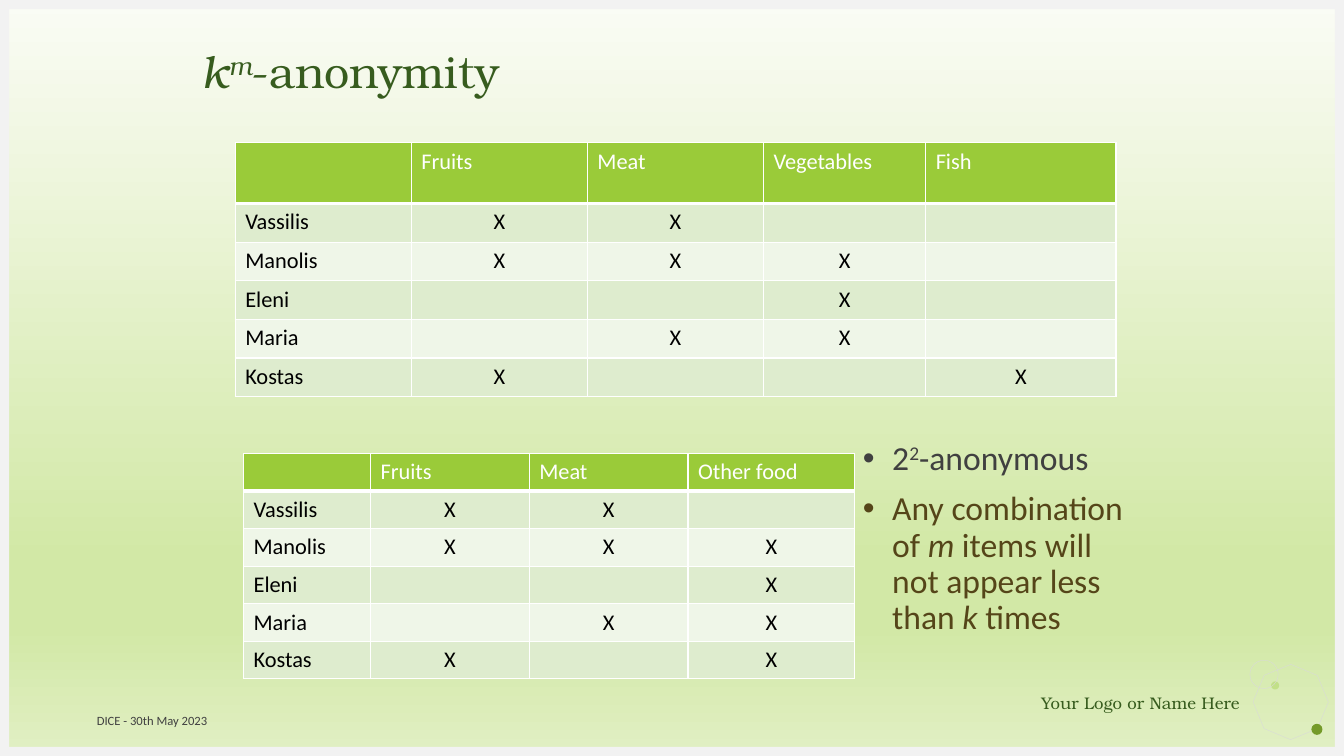
"""Build the k^m-anonymity slide with its two food tables."""
from copy import deepcopy

from lxml import etree
from pptx import Presentation
from pptx import util as u
from pptx.dml.color import RGBColor
from pptx.enum import shapes, text
from pptx.oxml.ns import qn

WIDTH, HEIGHT, FRAME = 960, 540, 6.5
SERIF, SANS = "TeX Gyre Bonum", "Calibri"
GREEN, GRAY, BROWN = "375C1E", "404040", "554519"
WHITE, BLACK, FRAME_GRAY, RING = "FFFFFF", "000000", "F2F2F2", "D9D9D9"
HEADER, BANDS = "9ACB39", ("DEECCE", "EFF6E8")
LEFT, CENTER, RIGHT = text.PP_ALIGN.LEFT, text.PP_ALIGN.CENTER, text.PP_ALIGN.RIGHT
OVAL, RECT, OCTAGON = (shapes.MSO_SHAPE.OVAL, shapes.MSO_SHAPE.RECTANGLE,
                       shapes.MSO_SHAPE.OCTAGON)


def rgb(value):
    return RGBColor.from_string(value)


class Deck:
    def __init__(self):
        self.prs = Presentation()
        self.prs.slide_width, self.prs.slide_height = u.Pt(WIDTH), u.Pt(HEIGHT)
        self.s = self.prs.slides.add_slide(self.prs.slide_layouts[1])

    def background(self, stops):
        fill = self.s.background.fill
        fill.gradient()
        fill.gradient_angle = 270
        gs_list = next(self.s.element.iter(qn("a:gsLst")))
        while len(gs_list) < len(stops):
            gs_list.append(deepcopy(gs_list[0]))
        for stop, (position, color) in zip(fill.gradient_stops, stops):
            stop.position = position
            stop.color.rgb = rgb(color)

    def shape(self, kind, box, fill=None, line=None, rotation=0):
        sp = self.s.shapes.add_shape(kind, *map(u.Pt, box))
        sp.shadow.inherit = False
        sp.rotation = rotation
        if fill:
            sp.fill.solid()
            sp.fill.fore_color.rgb = rgb(fill)
        else:
            sp.fill.background()
        if line:
            sp.line.color.rgb = rgb(line)
            sp.line.width = u.Pt(0.25)
        else:
            sp.line.fill.background()

    def runs(self, p, parts, size, color, font=SANS):
        for content, marks in parts:
            r = p.add_run()
            r.text = content
            r.font.name, r.font.size = font, u.Pt(size)
            r.font.color.rgb = rgb(color)
            r.font.italic = "i" in marks
            if "^" in marks:
                r.font._element.set("baseline", "30000")

    def frame(self, sp, box, anchor):
        sp.left, sp.top, sp.width, sp.height = map(u.Pt, box)
        tf = sp.text_frame
        tf.word_wrap, tf.auto_size = True, text.MSO_AUTO_SIZE.NONE
        tf.margin_left = tf.margin_right = tf.margin_top = tf.margin_bottom = 0
        tf.vertical_anchor = anchor
        return tf

    def title(self, box, parts):
        p = self.frame(self.s.shapes.title, box, text.MSO_ANCHOR.MIDDLE).paragraphs[0]
        p.alignment, p.line_spacing = LEFT, 0.9
        self.runs(p, parts, 32, GREEN, SERIF)

    def bullets(self, box, items):
        tf = self.frame(self.s.placeholders[1], box, text.MSO_ANCHOR.TOP)
        for i, (color, parts) in enumerate(items):
            p = tf.add_paragraph() if i else tf.paragraphs[0]
            p.line_spacing, p.space_before = 0.9, u.Pt(10)
            pPr = p._p.get_or_add_pPr()
            pPr.set("marL", str(u.Pt(21)))
            pPr.set("indent", str(-u.Pt(21)))
            etree.SubElement(pPr, qn("a:buFont"), typeface="Arial")
            etree.SubElement(pPr, qn("a:buChar"), char="•")
            self.runs(p, parts, 24, color)

    def label(self, box, content, size, color, font, align=LEFT,
              anchor=text.MSO_ANCHOR.TOP):
        p = self.frame(self.s.shapes.add_textbox(0, 0, 0, 0), box, anchor).paragraphs[0]
        p.alignment = align
        self.runs(p, [(content, "")], size, color, font)

    def cell(self, cell, content, fill, color, align, bottom):
        tcPr = cell._tc.get_or_add_tcPr()
        for side, width in (("L", 1), ("R", 1), ("T", 1), ("B", bottom)):
            ln = etree.SubElement(tcPr, qn("a:ln" + side), w=str(u.Pt(width)))
            solid = etree.SubElement(ln, qn("a:solidFill"))
            etree.SubElement(solid, qn("a:srgbClr"), val=WHITE)
        cell.fill.solid()
        cell.fill.fore_color.rgb = rgb(fill)
        p = cell.text_frame.paragraphs[0]
        p.alignment = align
        if content:
            self.runs(p, [(content, "")], 16, color)
        else:
            etree.SubElement(p._p, qn("a:endParaRPr"), sz="1600")

    def table(self, left, top, widths, heights, rows):
        box = (left, top, sum(widths), sum(heights))
        table = self.s.shapes.add_table(len(rows), len(widths), *map(u.Pt, box)).table
        for column, width in zip(table.columns, widths):
            column.width = u.Pt(width)
        for i, (row, height) in enumerate(zip(rows, heights)):
            table.rows[i].height = u.Pt(height)
            fill = BANDS[(i - 1) % 2] if i else HEADER
            for j, content in enumerate(row):
                self.cell(table.cell(i, j), content, fill, BLACK if i else WHITE,
                          CENTER if i and j else LEFT, 1 if i else 3)


def main():
    deck = Deck()
    deck.background([(0, "FAFCF5"), (0.74, "D2E8A6"), (0.83, "D2E8A6"), (1, "E1EFC4")])

    deck.shape(OCTAGON, (897.1, 476.6, 49.7, 49.7), line=RING, rotation=22.7)
    deck.shape(OVAL, (907.9, 486.7, 5.8, 5.8), fill="C2E088")
    deck.shape(OVAL, (936.7, 517, 7.9, 7.9), fill="749A29")
    deck.shape(OVAL, (892.8, 471.6, 20.2, 20.2), line=RING)
    deck.label((687.6, 494.6, 198, 14.4), "Your Logo or Name Here", 12, GREEN, SERIF, RIGHT)
    for edge in ((0, HEIGHT - FRAME, WIDTH, FRAME), (0, 0, WIDTH, FRAME),
                 (0, 0, FRAME, HEIGHT), (WIDTH - FRAME, 0, FRAME, HEIGHT)):
        deck.shape(RECT, edge, fill=FRAME_GRAY)

    deck.title((144, 23, 672, 60), [("k", "i"), ("m", "i^"), ("-anonymity", "")])
    deck.bullets((616.3, 315.4, 197.3, 164.9), [
        (GRAY, [("2", ""), ("2", "^"), ("-anonymous", "")]),
        (BROWN, [("Any combination of ", ""), ("m", "i"),
                 (" items will not appear less than ", ""), ("k", "i"), (" times", "")]),
    ])
    deck.label((69.1, 500.4, 445, 28.8), "DICE - 30th May 2023", 9, GRAY, SANS,
               anchor=text.MSO_ANCHOR.MIDDLE)

    deck.table(168, 102, [125.8] * 3 + [115.9, 136], [43.4] + [27.6] * 5, [
        ("", "Fruits", "Meat", "Vegetables", "Fish"),
        ("Vassilis", "Χ", "Χ", "", ""),
        ("Manolis", "Χ", "Χ", "Χ", ""),
        ("Eleni", "", "", "Χ", ""),
        ("Maria", "", "Χ", "Χ", ""),
        ("Kostas", "Χ", "", "", "Χ"),
    ])
    deck.table(174, 324, [90.7, 113.4, 113.4, 119], [26.8] * 6, [
        ("", "Fruits", "Meat", "Other food"),
        ("Vassilis", "Χ", "Χ", ""),
        ("Manolis", "X", "Χ", "X"),
        ("Eleni", "", "", "X"),
        ("Maria", "", "Χ", "X"),
        ("Kostas", "Χ", "", "X"),
    ])
    deck.prs.save("out.pptx")


if __name__ == "__main__":
    main()
